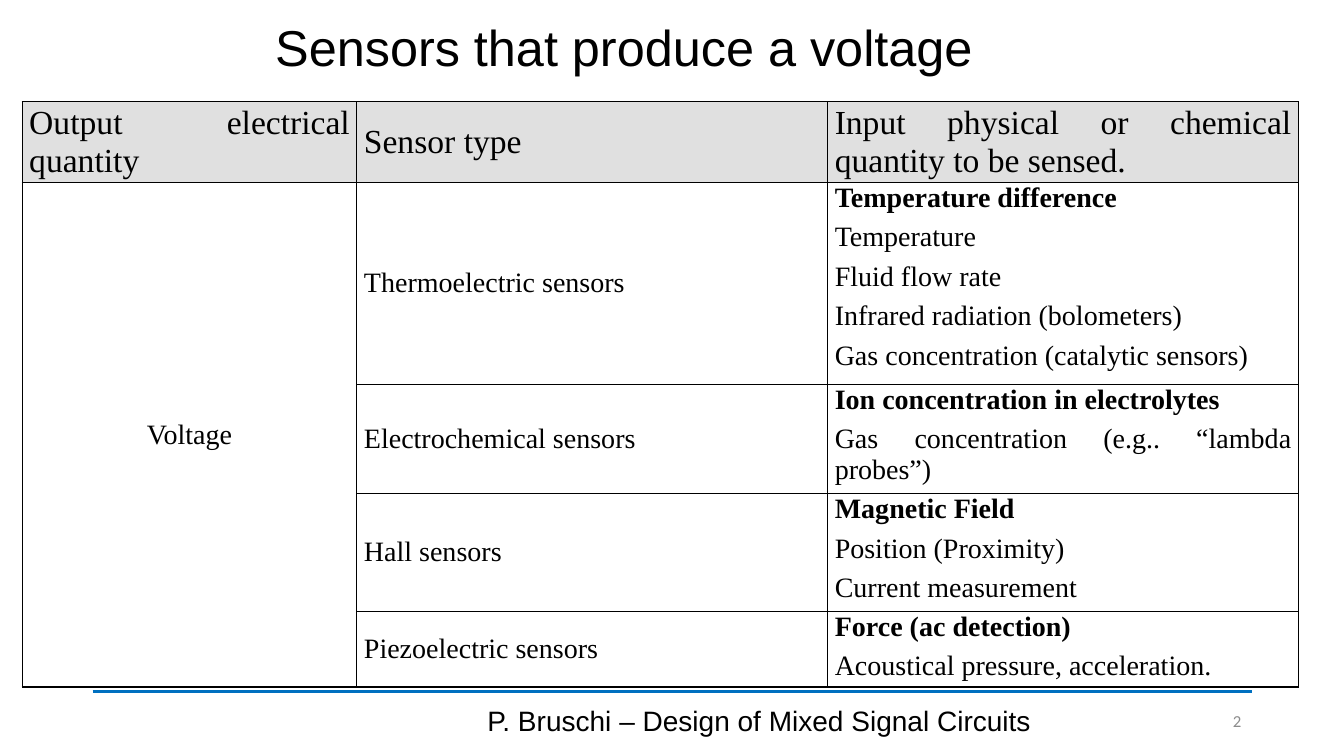
"""Build the slide on sensors that produce a voltage."""
import pptx
import pptx.dml.color
import pptx.enum.shapes
import pptx.enum.text
import pptx.oxml
import pptx.oxml.ns
import pptx.util
from pptx.util import Inches

TITLE = "Sensors that produce a voltage"
FOOTER = "P. Bruschi – Design of Mixed Signal Circuits"
SLIDE_NUMBER = "2"
HEADERS = ["Output electrical quantity", "Sensor type",
           "Input physical or chemical quantity to be sensed."]
OUTPUT = "Voltage"
SENSORS = [
    ("Thermoelectric sensors", [
        "Temperature difference", "Temperature", "Fluid flow rate",
        "Infrared radiation (bolometers)", "Gas concentration (catalytic sensors)"]),
    ("Electrochemical sensors", [
        "Ion concentration in electrolytes", "Gas concentration (e.g.. “lambda probes”)"]),
    ("Hall sensors", ["Magnetic Field", "Position (Proximity)", "Current measurement"]),
    ("Piezoelectric sensors", ["Force (ac detection)", "Acoustical pressure, acceleration."]),
]
COLUMN_WIDTHS = [3.32, 4.67, 4.67]
ROW_HEIGHTS = [0.75, 1.91, 1.01, 1.09, 0.71]

THEME = {
    "text": "000000", "muted": "8C8C8C", "header": "E0E0E0", "rule": "0070C0", "border": "000000",
    "title_font": "Arial", "table_font": "Times New Roman", "number_font": "Calibri",
    "title_size": 36, "header_size": 24, "body_size": 20, "number_size": 12,
}
ALIGN = pptx.enum.text.PP_ALIGN
ANCHOR = pptx.enum.text.MSO_ANCHOR


def rgb(name):
    """Return a theme colour."""
    return pptx.dml.color.RGBColor.from_string(THEME[name])


def format_paragraph(paragraph, text, font, size, align, color="text", bold=False):
    """Write one paragraph in a theme style."""
    paragraph.text = text
    paragraph.alignment = align
    paragraph.font.name = THEME[font]
    paragraph.font.size = pptx.util.Pt(THEME[size])
    paragraph.font.color.rgb = rgb(color)
    paragraph.font.bold = bold


def add_label(slide, box, text, font, size, align, color):
    """Add a single-line text box."""
    frame = slide.shapes.add_textbox(*map(Inches, box)).text_frame
    frame.word_wrap = True
    frame.vertical_anchor = ANCHOR.MIDDLE
    format_paragraph(frame.paragraphs[0], text, font, size, align, color)


def add_borders(cell):
    """Draw a thin line on all four sides of a cell."""
    properties = cell._tc.get_or_add_tcPr()
    for position, side in enumerate(("lnL", "lnR", "lnT", "lnB")):
        properties.insert(position, pptx.oxml.parse_xml(
            f'<a:{side} {pptx.oxml.ns.nsdecls("a")} w="12700"><a:solidFill>'
            f'<a:srgbClr val="{THEME["border"]}"/></a:solidFill></a:{side}>'))


def fill_cell(cell, lines, size="body_size", align=ALIGN.JUSTIFY, anchor=ANCHOR.MIDDLE, lead=False):
    """Write the lines of a cell, with the first one bold if it leads."""
    cell.margin_left = cell.margin_right = Inches(0.07)
    cell.margin_top = cell.margin_bottom = 0
    cell.vertical_anchor = anchor
    frame = cell.text_frame
    for index, line in enumerate(lines):
        paragraph = frame.add_paragraph() if index else frame.paragraphs[0]
        format_paragraph(paragraph, line, "table_font", size, align, bold=lead and index == 0)
        paragraph.space_after = pptx.util.Pt(6)


def add_sensor_table(slide):
    """Add the table of sensor types."""
    table = slide.shapes.add_table(
        len(ROW_HEIGHTS), len(COLUMN_WIDTHS), Inches(0.22), Inches(1.01),
        Inches(sum(COLUMN_WIDTHS)), Inches(sum(ROW_HEIGHTS))).table
    for column, width in zip(table.columns, COLUMN_WIDTHS):
        column.width = Inches(width)
    for row, height in zip(table.rows, ROW_HEIGHTS):
        row.height = Inches(height)
    table.horz_banding = False
    for row_index, row in enumerate(table.rows):
        for cell in row.cells:
            if row_index == 0:
                cell.fill.solid()
                cell.fill.fore_color.rgb = rgb("header")
            else:
                cell.fill.background()
            add_borders(cell)
    for column_index, header in enumerate(HEADERS):
        fill_cell(table.cell(0, column_index), [header], "header_size")
    table.cell(1, 0).merge(table.cell(len(SENSORS), 0))
    fill_cell(table.cell(1, 0), [OUTPUT], align=ALIGN.CENTER)
    for row_index, (sensor, quantities) in enumerate(SENSORS, 1):
        fill_cell(table.cell(row_index, 1), [sensor])
        fill_cell(table.cell(row_index, 2), quantities, anchor=ANCHOR.TOP, lead=True)


def main():
    """Assemble and save the slide."""
    presentation = pptx.Presentation()
    presentation.slide_width, presentation.slide_height = Inches(13.33), Inches(7.5)
    slide = presentation.slides.add_slide(presentation.slide_layouts[5])

    rule = slide.shapes.add_connector(
        pptx.enum.shapes.MSO_CONNECTOR.STRAIGHT,
        Inches(0.92), Inches(6.86), Inches(12.42), Inches(6.86))
    rule.line.color.rgb = rgb("rule")
    rule.line.width = pptx.util.Pt(2.75)
    rule._element.spPr.append(pptx.oxml.parse_xml(
        f'<a:effectLst {pptx.oxml.ns.nsdecls("a")}/>'))

    title = slide.shapes.title
    title.left, title.top, title.width, title.height = map(Inches, (0.44, 0.14, 11.5, 0.72))
    title.text_frame.vertical_anchor = ANCHOR.MIDDLE
    heading = title.text_frame.paragraphs[0]
    format_paragraph(heading, TITLE, "title_font", "title_size", ALIGN.CENTER)
    heading.line_spacing = 0.9

    add_label(slide, (4.42, 6.95, 6.22, 0.4), FOOTER,
              "title_font", "body_size", ALIGN.CENTER, "text")
    add_label(slide, (11.45, 6.95, 0.96, 0.4), SLIDE_NUMBER,
              "number_font", "number_size", ALIGN.RIGHT, "muted")
    add_sensor_table(slide)
    presentation.save("out.pptx")


if __name__ == "__main__":
    main()
